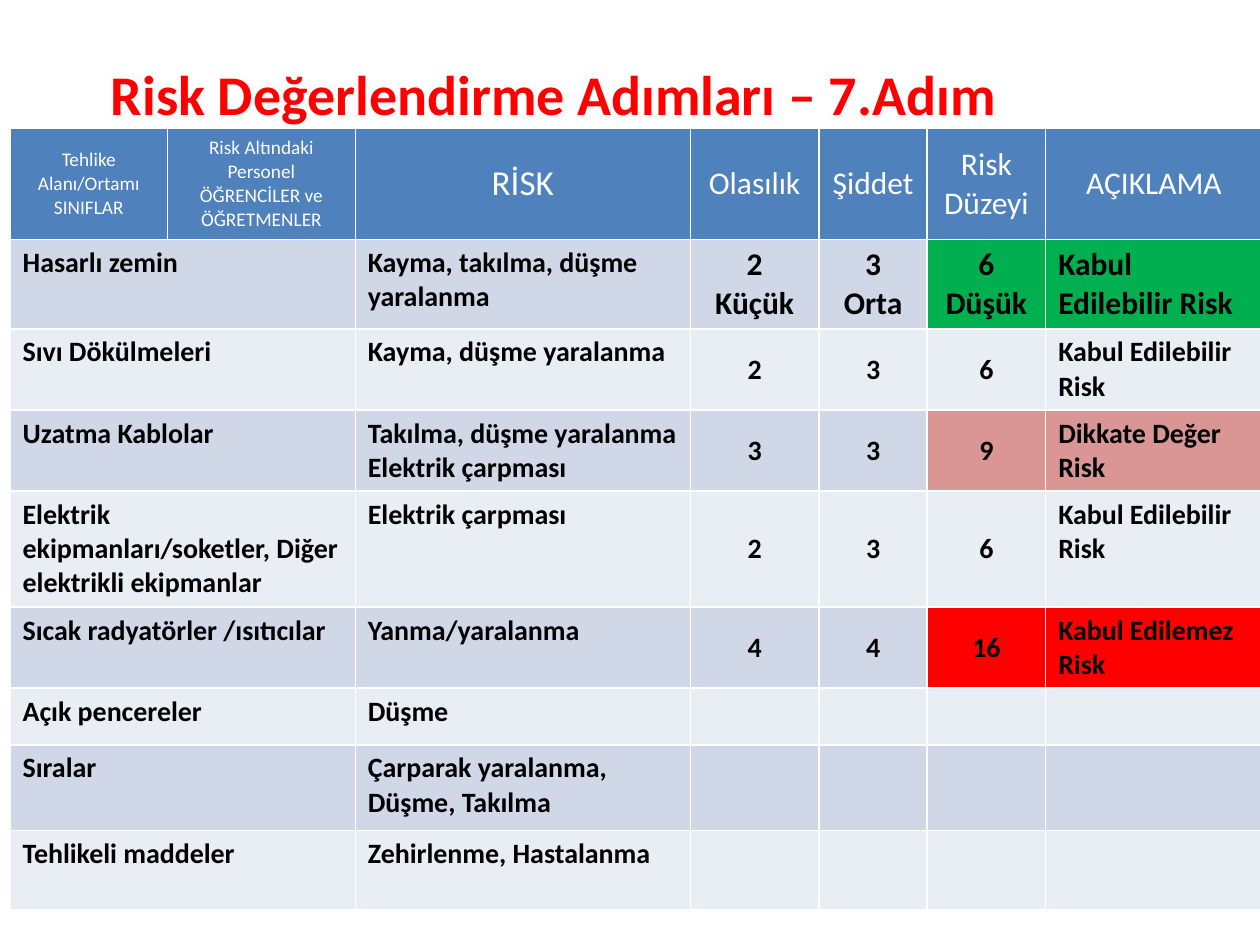
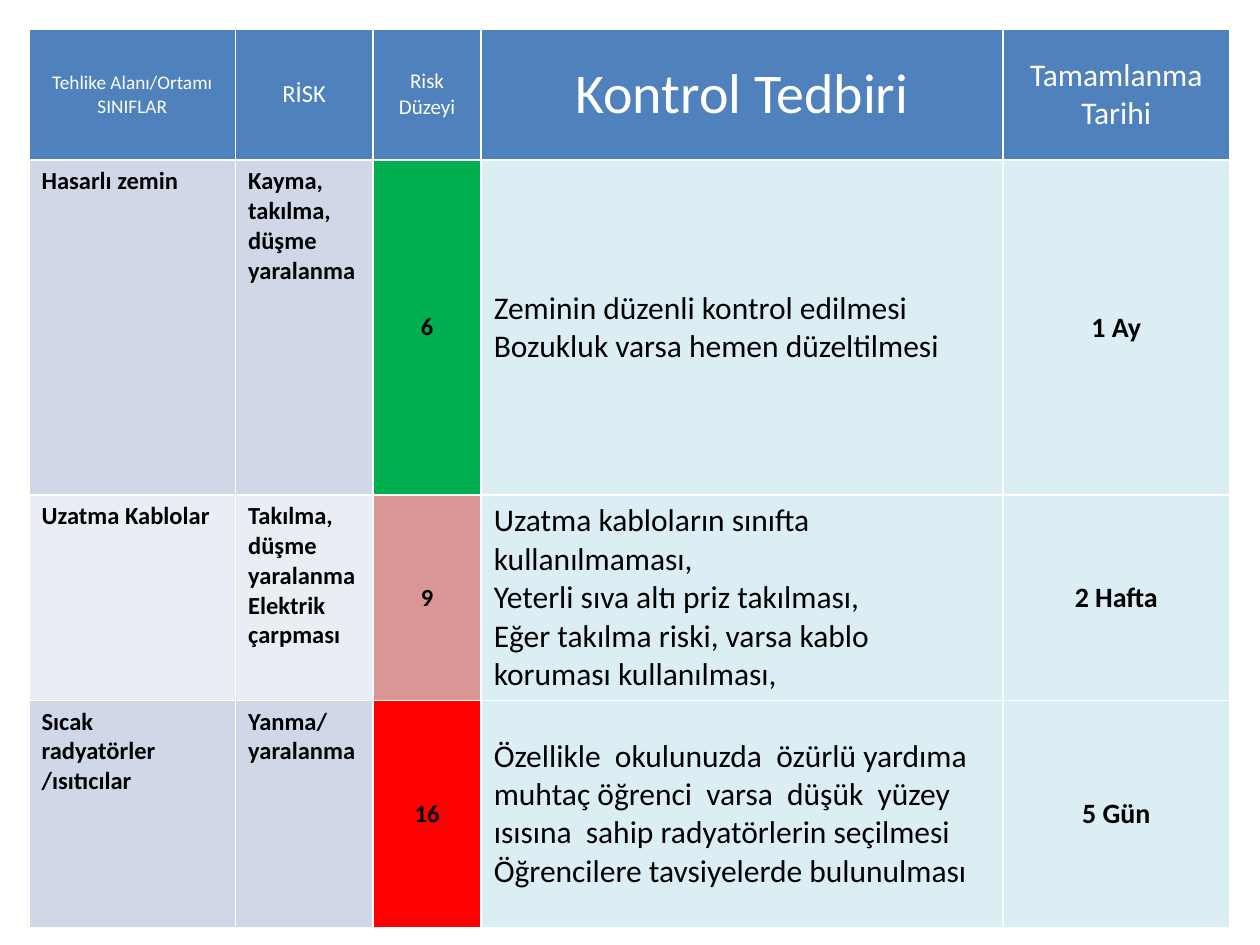
from pptx import Presentation
from pptx.dml.color import RGBColor
from pptx.enum.text import MSO_ANCHOR, PP_ALIGN
from pptx.util import Inches, Pt

CENTER, LEFT = PP_ALIGN.CENTER, PP_ALIGN.LEFT
MIDDLE, TOP = MSO_ANCHOR.MIDDLE, MSO_ANCHOR.TOP
TITLE_ONLY, BLANK = 5, 6
FONT = "Calibri"

COLORS = {
    "header": "4F81BD",
    "band_dark": "D0D8E8",
    "band_light": "E9EDF4",
    "measure": "DBEEF4",
    "low": "00B050",
    "notable": "D99694",
    "unacceptable": "FF0000",
    "title": "FF0000",
    "white": "FFFFFF",
    "black": "000000",
}

# Assessment table: hazard, risk, likelihood, severity, level, remark, level colour
ASSESSMENT_COLUMNS = [1.25, 1.49, 2.66, 1.02, 0.86, 0.94, 1.72]
ASSESSMENT_ROWS = [0.88, 0.71, 0.64, 0.64, 0.92, 0.64, 0.45, 0.68, 0.63]
ASSESSMENT_HEADERS = [
    ("Tehlike Alanı/Ortamı\nSINIFLAR", 11),
    ("Risk Altındaki Personel\nÖĞRENCİLER ve ÖĞRETMENLER", 11),
    ("RİSK", 20),
    ("Olasılık", 18),
    ("Şiddet", 18),
    ("Risk Düzeyi", 18),
    ("AÇIKLAMA", 18),
]
ACCEPTABLE = "Kabul Edilebilir Risk"
HAZARDS = [
    ("Hasarlı zemin", "Kayma, takılma, düşme yaralanma",
     "2\nKüçük", "3\nOrta", "6\nDüşük", ACCEPTABLE, "low"),
    ("Sıvı Dökülmeleri", "Kayma, düşme yaralanma", "2", "3", "6", ACCEPTABLE, None),
    ("Uzatma Kablolar", "Takılma, düşme yaralanma Elektrik çarpması",
     "3", "3", "9", "Dikkate Değer Risk", "notable"),
    ("Elektrik ekipmanları/soketler, Diğer elektrikli ekipmanlar",
     "Elektrik çarpması", "2", "3", "6", ACCEPTABLE, None),
    ("Sıcak radyatörler /ısıtıcılar", "Yanma/yaralanma",
     "4", "4", "16", "Kabul Edilemez Risk", "unacceptable"),
    ("Açık pencereler", "Düşme", "", "", "", "", None),
    ("Sıralar", "Çarparak yaralanma, Düşme, Takılma", "", "", "", "", None),
    ("Tehlikeli maddeler", "Zehirlenme, Hastalanma", "", "", "", "", None),
]

# Control table: hazard, risk, level, measures, deadline, level colour
CONTROL_COLUMNS = [1.64, 1.09, 0.86, 4.14, 1.8]
CONTROL_ROWS = [1.04, 2.66, 1.63, 1.8]
CONTROL_HEADERS = [
    ("Tehlike Alanı/Ortamı\nSINIFLAR", 11),
    ("RİSK", 14),
    ("Risk Düzeyi", 12),
    ("Kontrol Tedbiri", 32),
    ("Tamamlanma Tarihi", 18),
]
CONTROLS = [
    ("Hasarlı zemin", "Kayma, takılma, düşme yaralanma", "6",
     "Zeminin düzenli kontrol edilmesi\nBozukluk varsa hemen düzeltilmesi",
     "1 Ay", "low"),
    ("Uzatma Kablolar", "Takılma, düşme yaralanma Elektrik çarpması", "9",
     "Uzatma kabloların sınıfta kullanılmaması,\n"
     "Yeterli sıva altı priz takılması,\n"
     "Eğer takılma riski, varsa kablo koruması kullanılması,",
     "2 Hafta", "notable"),
    ("Sıcak radyatörler /ısıtıcılar", "Yanma/yaralanma", "16",
     "Özellikle  okulunuzda  özürlü yardıma  muhtaç öğrenci  varsa  düşük  yüzey  "
     "ısısına  sahip radyatörlerin seçilmesi\n"
     "Öğrencilere tavsiyelerde bulunulması",
     "5 Gün", "unacceptable"),
]


def rgb(name):
    return RGBColor.from_string(COLORS[name])


def write(frame, text, size, color="black", bold=True, align=LEFT):
    """Fill a text frame, one paragraph per line of text."""
    for index, line in enumerate(text.split("\n")):
        paragraph = frame.paragraphs[0] if index == 0 else frame.add_paragraph()
        paragraph.alignment = align
        run = paragraph.add_run()
        run.text = line
        run.font.name = FONT
        run.font.size = Pt(size)
        run.font.bold = bold
        run.font.color.rgb = rgb(color)


def fill_cell(cell, text, size, fill, color="black", bold=True, align=LEFT, anchor=TOP):
    cell.fill.solid()
    cell.fill.fore_color.rgb = rgb(fill)
    cell.vertical_anchor = anchor
    if text:
        write(cell.text_frame, text, size, color, bold, align)


def add_grid(slide, left, top, widths, heights, headers):
    """Add a table with its header row; the table style draws the white rules."""
    grid = slide.shapes.add_table(
        len(heights), len(widths), Inches(left), Inches(top),
        Inches(sum(widths)), Inches(sum(heights))).table
    for column, width in zip(grid.columns, widths):
        column.width = Inches(width)
    for row, height in zip(grid.rows, heights):
        row.height = Inches(height)
    for column, (heading, size) in enumerate(headers):
        fill_cell(grid.cell(0, column), heading, size, "header", "white",
                  bold=False, align=CENTER, anchor=MIDDLE)
    return grid


def band(row):
    return "band_dark" if row % 2 else "band_light"


def add_title(slide, text):
    title = slide.shapes.title
    title.left, title.top = Inches(0.78), Inches(0)
    title.width, title.height = Inches(8.28), Inches(1.48)
    title.text_frame.vertical_anchor = MIDDLE
    write(title.text_frame, text, 32, "title")


def add_assessment_slide(deck):
    slide = deck.slides.add_slide(deck.slide_layouts[TITLE_ONLY])
    add_title(slide, "Risk Değerlendirme Adımları – 7.Adım")
    grid = add_grid(slide, 0.08, 1.02, ASSESSMENT_COLUMNS, ASSESSMENT_ROWS,
                    ASSESSMENT_HEADERS)
    for row, (hazard, risk, *scores, remark, level) in enumerate(HAZARDS, 1):
        plain, marked = band(row), level or band(row)
        score_size = 18 if row == 1 else 16
        grid.cell(row, 0).merge(grid.cell(row, 1))
        fill_cell(grid.cell(row, 0), hazard, 16, plain)
        fill_cell(grid.cell(row, 2), risk, 16, plain)
        for column, (score, fill) in enumerate(zip(scores, (plain, plain, marked)), 3):
            fill_cell(grid.cell(row, column), score, score_size, fill,
                      align=CENTER, anchor=MIDDLE)
        fill_cell(grid.cell(row, 6), remark, score_size, marked)


def add_control_slide(deck):
    slide = deck.slides.add_slide(deck.slide_layouts[BLANK])
    grid = add_grid(slide, 0.23, 0.23, CONTROL_COLUMNS, CONTROL_ROWS, CONTROL_HEADERS)
    for row, (hazard, risk, score, measures, deadline, level) in enumerate(CONTROLS, 1):
        fill_cell(grid.cell(row, 0), hazard, 14, band(row))
        fill_cell(grid.cell(row, 1), risk, 14, band(row))
        fill_cell(grid.cell(row, 2), score, 14, level, align=CENTER, anchor=MIDDLE)
        fill_cell(grid.cell(row, 3), measures, 18, "measure", bold=False, anchor=MIDDLE)
        fill_cell(grid.cell(row, 4), deadline, 16, "measure", align=CENTER, anchor=MIDDLE)


def main():
    deck = Presentation()
    deck.slide_width, deck.slide_height = Inches(10), Inches(7.5)
    add_assessment_slide(deck)
    add_control_slide(deck)
    deck.save("out.pptx")


if __name__ == "__main__":
    main()
